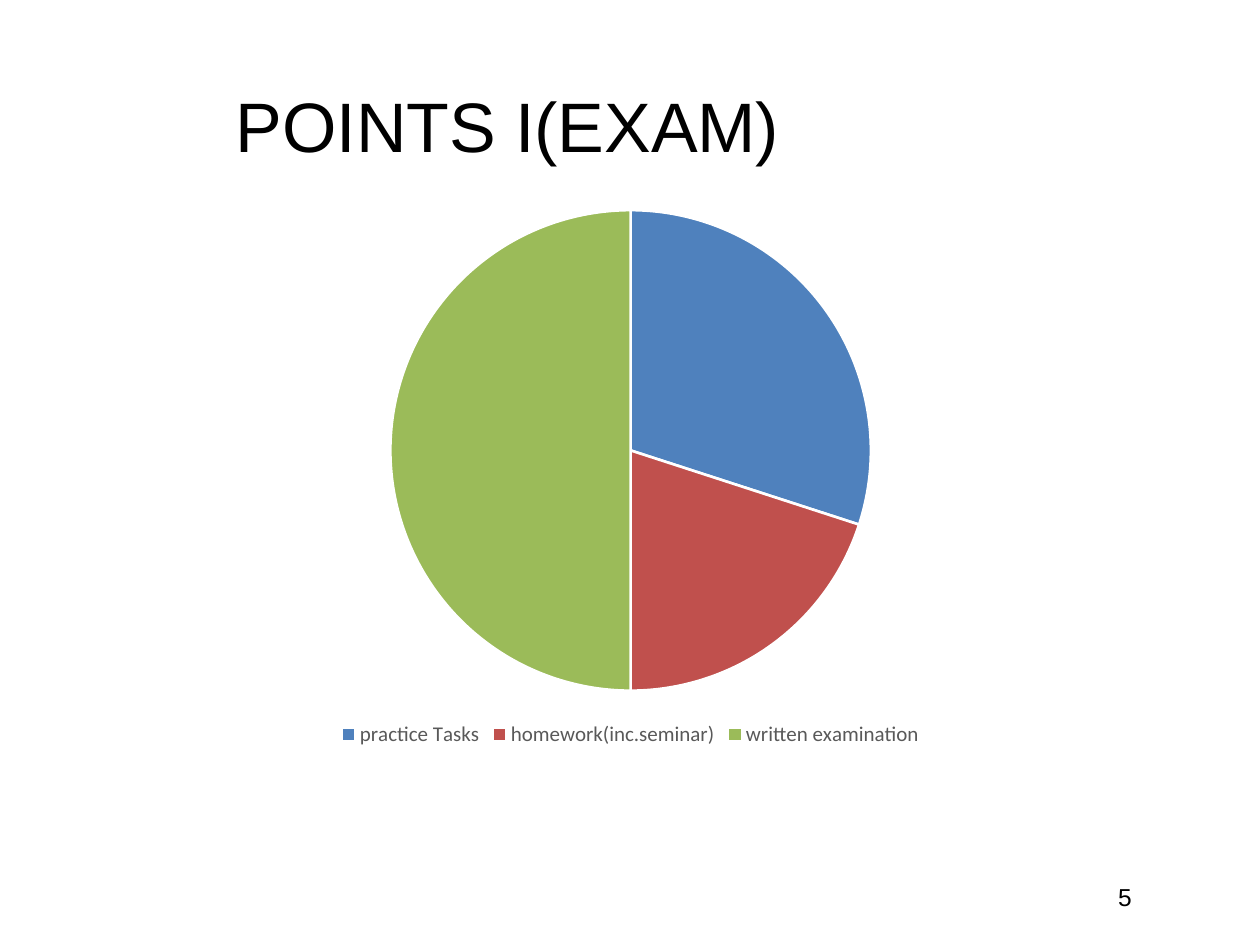
import pptx
import pptx.chart.data
import pptx.dml.color
import pptx.enum.chart
import pptx.enum.text
import pptx.util
from dataclasses import dataclass

TITLE = "POINTS I(EXAM)"
PAGE_NUMBER = "5"
POINTS = [
    ("practice Tasks", 30, "4F81BD"),
    ("homework(inc.seminar)", 20, "C0504D"),
    ("written examination", 50, "9BBB59"),
]


@dataclass(frozen=True)
class Theme:
    text: str = "000000"
    legend: str = "595959"
    border: str = "FFFFFF"
    text_font: str = "Arial"
    chart_font: str = "Calibri"
    title_size: int = 40
    number_size: int = 14
    chart_size: int = 10
    legend_size: int = 12


THEME = Theme()
WIDTH, HEIGHT = 10, 7.5

# Left, top, width and height as shares of the slide
TITLE_AREA = (0.162, 0.048, 0.744, 0.168)
CHART_AREA = (0.167, 0.204, 0.667, 0.592)
NUMBER_AREA = (0.823, 0.927, 0.085, 0.053)


def area(shares):
    return [pptx.util.Inches(share * side)
            for share, side in zip(shares, (WIDTH, HEIGHT) * 2)]


def rgb(code):
    return pptx.dml.color.RGBColor.from_string(code)


def style(font, name, size, color):
    font.name = name
    font.size = pptx.util.Pt(size)
    font.color.rgb = rgb(color)


def add_title(slide):
    title = slide.shapes.title
    title.left, title.top, title.width, title.height = area(TITLE_AREA)
    frame = title.text_frame
    frame.text = TITLE
    frame.margin_left = pptx.util.Inches(0.25)
    frame.vertical_anchor = pptx.enum.text.MSO_ANCHOR.MIDDLE
    paragraph = frame.paragraphs[0]
    paragraph.alignment = pptx.enum.text.PP_ALIGN.LEFT
    style(paragraph.runs[0].font, THEME.text_font, THEME.title_size, THEME.text)


def add_points_chart(slide):
    labels, values, colors = zip(*POINTS)
    data = pptx.chart.data.CategoryChartData()
    data.categories = labels
    data.add_series("Series 1", values)
    chart = slide.shapes.add_chart(
        pptx.enum.chart.XL_CHART_TYPE.PIE, *area(CHART_AREA), data).chart
    style(chart.font, THEME.chart_font, THEME.chart_size, THEME.text)
    chart.has_title = False
    chart.has_legend = True
    chart.legend.position = pptx.enum.chart.XL_LEGEND_POSITION.BOTTOM
    chart.legend.include_in_layout = False
    style(chart.legend.font, THEME.chart_font, THEME.legend_size, THEME.legend)

    pie = chart.plots[0]
    pie.vary_by_categories = True
    for index, color in enumerate(colors):
        wedge = pie.series[0].points[index].format
        wedge.fill.solid()
        wedge.fill.fore_color.rgb = rgb(color)
        wedge.line.color.rgb = rgb(THEME.border)
        wedge.line.width = pptx.util.Pt(1.5)


def add_page_number(slide):
    frame = slide.shapes.add_textbox(*area(NUMBER_AREA)).text_frame
    frame.word_wrap = True
    frame.text = PAGE_NUMBER
    paragraph = frame.paragraphs[0]
    paragraph.alignment = pptx.enum.text.PP_ALIGN.RIGHT
    style(paragraph.runs[0].font, THEME.text_font, THEME.number_size, THEME.text)


def main():
    deck = pptx.Presentation()
    deck.slide_width = pptx.util.Inches(WIDTH)
    deck.slide_height = pptx.util.Inches(HEIGHT)
    title_only = deck.slide_layouts[5]
    slide = deck.slides.add_slide(title_only)
    add_title(slide)
    add_page_number(slide)
    add_points_chart(slide)
    deck.save("out.pptx")


if __name__ == "__main__":
    main()
